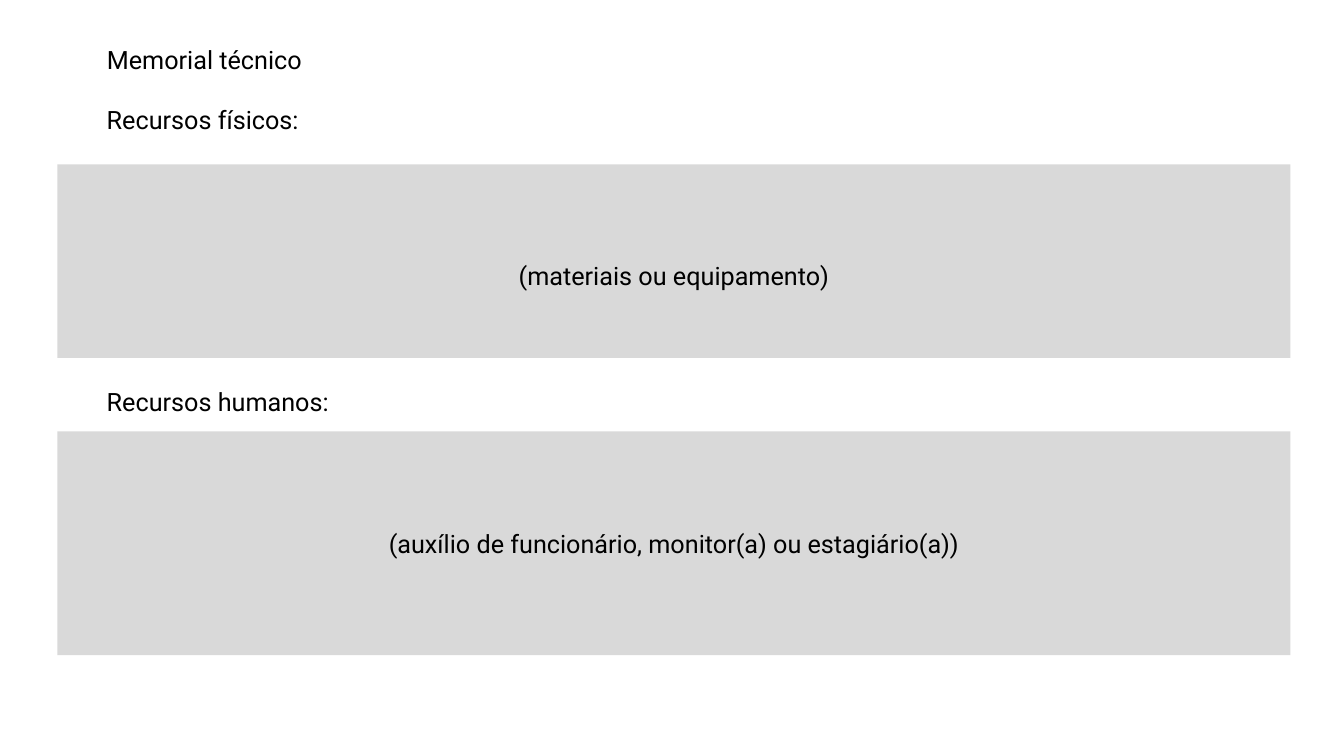
from pptx import Presentation
from pptx.dml.color import RGBColor
from pptx.enum.shapes import MSO_SHAPE
from pptx.enum.text import MSO_ANCHOR, PP_ALIGN
from pptx.util import Inches, Pt

COLORS = {"text": "000000", "panel": "D9D9D9"}
FONT = "Roboto"
WIDTH, HEIGHT = 13.33, 7.5
LABEL_INDENT = 0.39
LABEL_W, LABEL_H = 5.58, 0.4
PANEL_X, PANEL_W = 0.57, 12.23


def set_text(sp, text, align=PP_ALIGN.LEFT, anchor=MSO_ANCHOR.TOP, size=18, drop=0):
    """Fill a shape with one paragraph; drop adds to the top margin, in inches."""
    tf = sp.text_frame
    tf.word_wrap = True
    tf.vertical_anchor = anchor
    tf.margin_left = tf.margin_right = Inches(0.1)
    tf.margin_top, tf.margin_bottom = Inches(0.05 + drop), Inches(0.05)
    p = tf.paragraphs[0]
    p.alignment = align
    p.line_spacing = 1.0
    p.space_before = Pt(0)
    r = p.add_run()
    r.text = text
    r.font.name, r.font.size, r.font.bold = FONT, Pt(size), False
    r.font.color.rgb = RGBColor.from_string(COLORS["text"])


def add_title(s, x, y, text):
    sp = s.shapes.title
    sp.left, sp.top, sp.width, sp.height = map(Inches, (x, y, LABEL_W, LABEL_H))
    set_text(sp, text)


def add_resource(s, box, label, label_gap, hint, drop=0):
    """Place a grey panel in the box, with its label label_gap above the top edge."""
    x, y, w, h = box
    tb = s.shapes.add_textbox(
        *map(Inches, (x + LABEL_INDENT, y - label_gap - LABEL_H, LABEL_W, LABEL_H)))
    set_text(tb, label)
    panel = s.shapes.add_shape(MSO_SHAPE.RECTANGLE, *map(Inches, (x, y, w, h)))
    panel.shadow.inherit = False
    panel.fill.solid()
    panel.fill.fore_color.rgb = RGBColor.from_string(COLORS["panel"])
    panel.line.fill.background()
    set_text(panel, hint, align=PP_ALIGN.CENTER, anchor=MSO_ANCHOR.MIDDLE, drop=drop)


def main():
    prs = Presentation()
    prs.slide_width, prs.slide_height = Inches(WIDTH), Inches(HEIGHT)
    s = prs.slides.add_slide(prs.slide_layouts[5])
    add_title(s, PANEL_X + LABEL_INDENT, 0.39, "Memorial técnico")
    add_resource(s, (PANEL_X, 1.63, PANEL_W, 1.92), "Recursos físicos:", 0.24,
                 "(materiais ou equipamento)", drop=0.28)
    add_resource(s, (PANEL_X, 4.28, PANEL_W, 2.22), "Recursos humanos:", 0.1,
                 "(auxílio de funcionário, monitor(a) ou estagiário(a))")
    prs.save("out.pptx")


if __name__ == "__main__":
    main()
